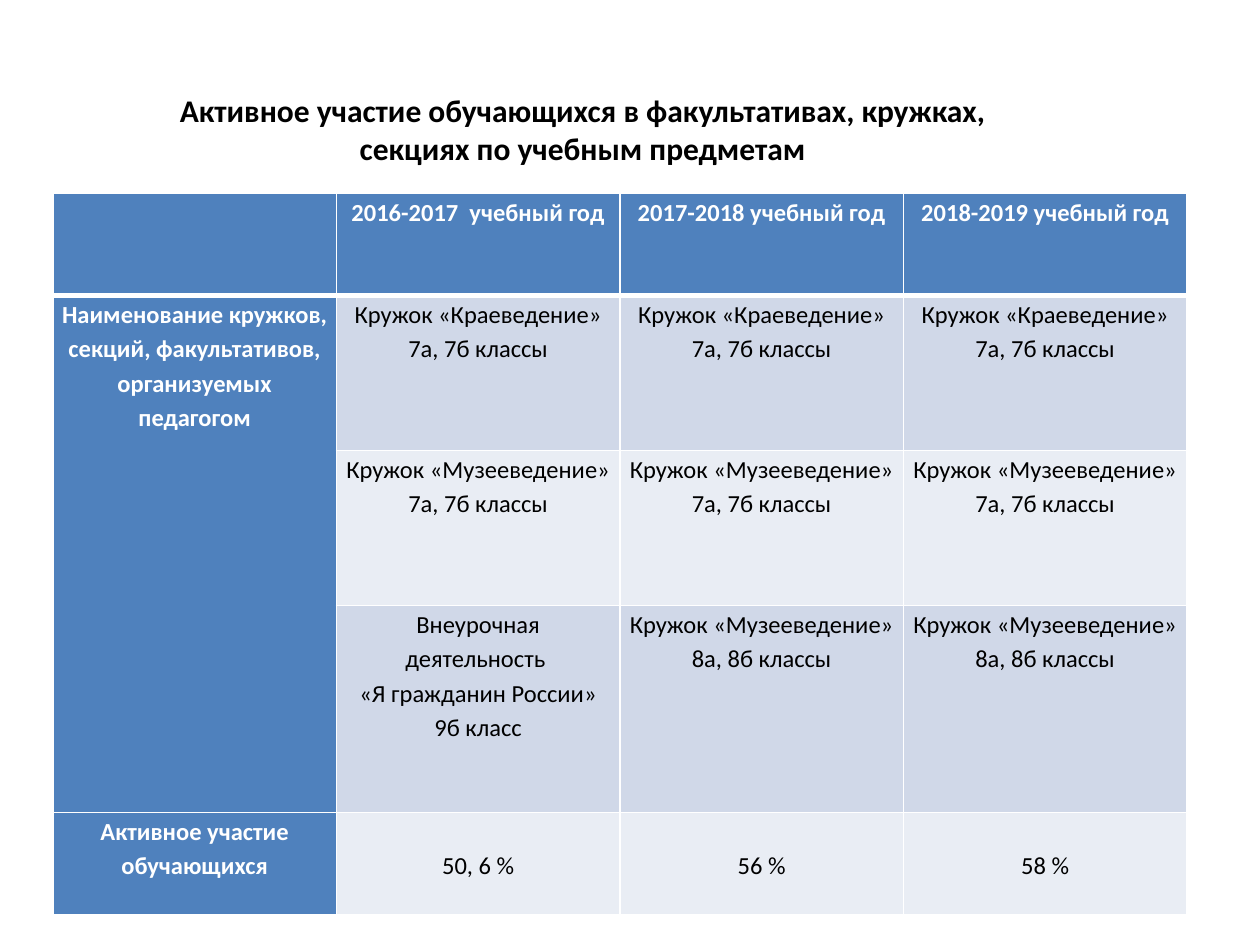
from dataclasses import dataclass

from lxml import etree
from pptx import Presentation
from pptx.dml.color import RGBColor
from pptx.enum.text import PP_ALIGN
from pptx.oxml.ns import qn
from pptx.util import Inches, Pt

CENTER = PP_ALIGN.CENTER
BLANK_LAYOUT = 6


@dataclass(frozen=True)
class Theme:
    font: str = "Calibri"
    ink: str = "000000"
    paper: str = "FFFFFF"
    accent: str = "4F81BD"
    bands: tuple = ("D0D8E8", "E9EDF4")
    title_size: int = 18
    cell_size: int = 14
    cell_spacing: float = 1.15
    cell_inset: float = 0.07
    thin: int = 1
    thick: int = 3


class SlideBuilder:
    """Places elements by shares of the slide's width and height."""

    def __init__(self, deck, theme):
        self.deck = deck
        self.theme = theme
        self.page = deck.slides.add_slide(deck.slide_layouts[BLANK_LAYOUT])

    def area(self, left, top, width, height):
        across, down = self.deck.slide_width, self.deck.slide_height
        return (int(left * across), int(top * down),
                int(width * across), int(height * down))

    def add_lines(self, frame, lines, size, color, bold, spacing=1.0):
        for index, line in enumerate(lines):
            para = frame.paragraphs[0] if index == 0 else frame.add_paragraph()
            para.alignment = CENTER
            para.line_spacing = spacing
            span = para.add_run()
            span.text = line
            span.font.name = self.theme.font
            span.font.size = Pt(size)
            span.font.bold = bold
            span.font.color.rgb = RGBColor.from_string(color)

    def title(self, text, *shares):
        box = self.page.shapes.add_textbox(*self.area(*shares))
        box.text_frame.word_wrap = True
        self.add_lines(box.text_frame, [text], self.theme.title_size,
                       self.theme.ink, True)

    def borders(self, cell, top, bottom):
        properties = cell._tc.get_or_add_tcPr()
        widths = {"a:lnL": self.theme.thin, "a:lnR": self.theme.thin,
                  "a:lnT": top, "a:lnB": bottom}
        for index, (tag, width) in enumerate(widths.items()):
            line = etree.Element(qn(tag), w=str(int(Pt(width))))
            fill = etree.SubElement(line, qn("a:solidFill"))
            etree.SubElement(fill, qn("a:srgbClr"), val=self.theme.paper)
            properties.insert(index, line)

    def cell(self, cell, text, row, column, top_inset):
        theme = self.theme
        heading = row == 0 or column == 0
        cell.margin_left = cell.margin_right = Inches(theme.cell_inset)
        cell.margin_top, cell.margin_bottom = Inches(top_inset), 0
        cell.fill.solid()
        cell.fill.fore_color.rgb = RGBColor.from_string(
            theme.accent if heading else theme.bands[(row - 1) % 2])
        self.borders(cell, theme.thick if row == 1 else theme.thin,
                     theme.thick if row == 0 else theme.thin)
        if text:
            self.add_lines(cell.text_frame, text.split("\n"), theme.cell_size,
                           theme.paper if heading else theme.ink,
                           heading, theme.cell_spacing)

    def table(self, rows, row_heights, merged_rows, lowered_row, *shares):
        """Merge the first column over merged_rows; start the values of
        lowered_row one text line further down."""
        table = self.page.shapes.add_table(
            len(rows), len(rows[0]), *self.area(*shares)).table
        table.horz_banding = False
        for row, height in enumerate(row_heights):
            table.rows[row].height = Inches(height)
        one_line = 0.27
        for row, texts in enumerate(rows):
            for column, text in enumerate(texts):
                lowered = row == lowered_row and column > 0
                self.cell(table.cell(row, column), text, row, column,
                          one_line if lowered else 0)
        first, last = merged_rows
        table.cell(first, 0).merge(table.cell(last, 0))


LOCAL_HISTORY = "Кружок «Краеведение»\n7а, 7б классы"
MUSEUM = "Кружок «Музееведение»\n{0}а, {0}б классы"
CITIZEN = "Внеурочная деятельность \n«Я гражданин России» 9б класс"

ROWS = [
    ["", "2016-2017  учебный год", "2017-2018 учебный год",
     "2018-2019 учебный год"],
    ["Наименование кружков, секций, факультативов, организуемых педагогом"]
    + [LOCAL_HISTORY] * 3,
    [""] + [MUSEUM.format(7)] * 3,
    ["", CITIZEN] + [MUSEUM.format(8)] * 2,
    ["Активное участие обучающихся", "50, 6 %", "56 %", "58 %"],
]
ROW_HEIGHTS = [0.81, 1.23, 1.23, 1.64, 0.81]


def main():
    deck = Presentation()
    deck.slide_width, deck.slide_height = Inches(10), Inches(7.5)
    slide = SlideBuilder(deck, Theme())
    slide.table(ROWS, ROW_HEIGHTS, (1, 3), 4, 0.042, 0.205, 0.9, 0.76)
    slide.title("Активное участие обучающихся в факультативах, кружках, "
                "секциях по учебным предметам", 0.125, 0.09, 0.675, 0.095)
    deck.save("out.pptx")


if __name__ == "__main__":
    main()
